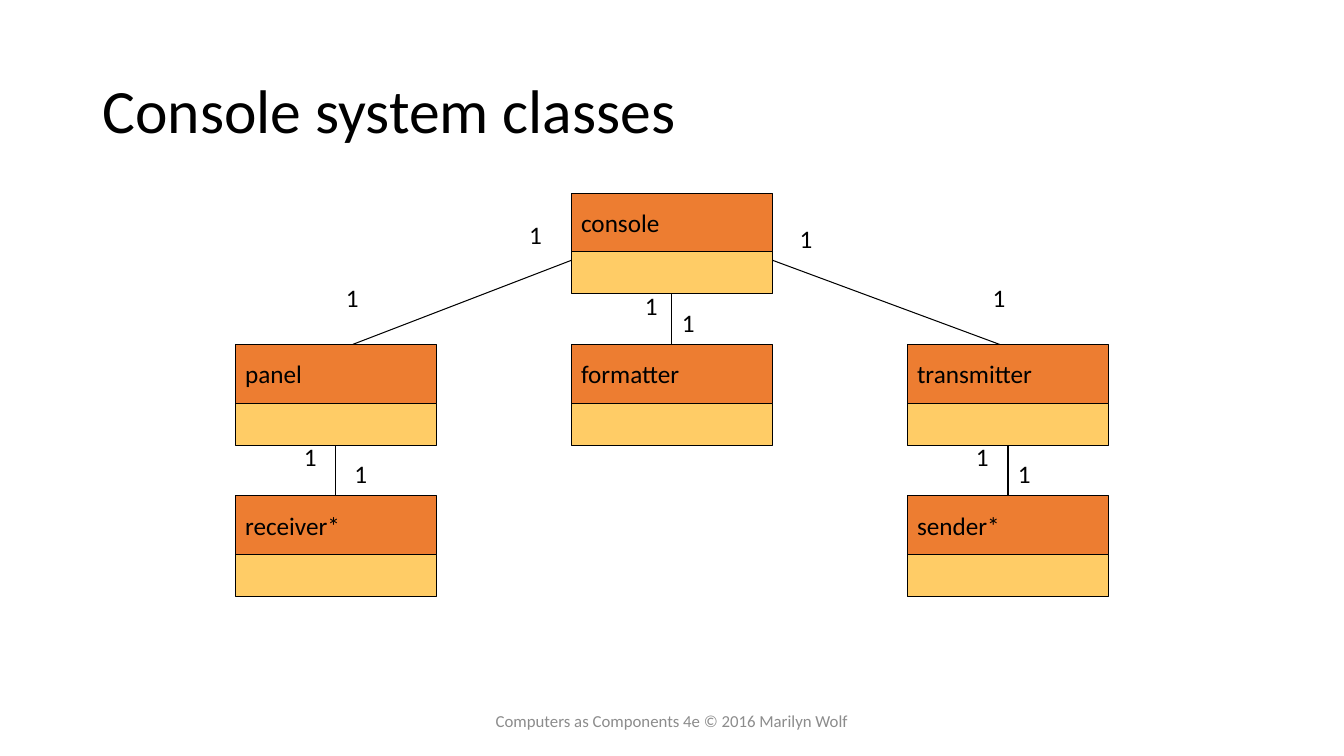
from pptx import Presentation
from pptx.dml.color import RGBColor
from pptx.enum.shapes import MSO_CONNECTOR, MSO_SHAPE
from pptx.enum.text import MSO_ANCHOR, MSO_AUTO_SIZE, PP_ALIGN
from pptx.oxml.ns import qn
from pptx.util import Inches, Pt
from lxml.etree import SubElement

COLUMNS, ROWS = 160, 90
BOX_WIDTH, HEAD_HEIGHT, BODY_HEIGHT = 24, 7, 5
BOX_HEIGHT = HEAD_HEIGHT + BODY_HEIGHT
LEFT, MIDDLE, RIGHT = 28, 68, 108
TOP, CENTRE, BOTTOM = 23, 41, 59


def colour(value):
    return RGBColor.from_string(value)


class ClassDiagram:
    font = "Calibri"
    ink = "000000"
    head_fill = "ED7D31"
    body_fill = "FFCC66"
    line_width = Pt(0.75)

    def __init__(self, deck):
        self.cell_width = deck.slide_width / COLUMNS
        self.cell_height = deck.slide_height / ROWS
        self.page = deck.slides.add_slide(deck.slide_layouts[5])

    def place(self, *cells):
        sizes = (self.cell_width, self.cell_height) * 2
        return [round(cell * size) for cell, size in zip(cells, sizes)]

    def set_text(self, box, text, size, ink=ink, align=PP_ALIGN.LEFT, anchor=MSO_ANCHOR.MIDDLE, wrap=True):
        frame = box.text_frame
        frame.word_wrap = wrap
        frame.vertical_anchor = anchor
        para = frame.paragraphs[0]
        para.text = text
        para.alignment = align
        para.font.name = self.font
        para.font.size = Pt(size)
        para.font.color.rgb = colour(ink)
        return para

    def stroke(self, line):
        line.color.rgb = colour(self.ink)
        line.width = self.line_width

    def title(self, text):
        box = self.page.shapes.title
        box.left, box.top, box.width, box.height = self.place(11, 4.8, 138, 17.4)
        self.set_text(box, text, 44).line_spacing = 0.9

    def rectangle(self, cells, fill):
        box = self.page.shapes.add_shape(MSO_SHAPE.RECTANGLE, *self.place(*cells))
        box.shadow.inherit = False
        box.fill.solid()
        box.fill.fore_color.rgb = colour(fill)
        self.stroke(box.line)
        return box

    def class_box(self, name, column, row):
        head = self.rectangle((column, row, BOX_WIDTH, HEAD_HEIGHT), self.head_fill)
        self.set_text(head, name, 18, wrap=False)
        self.rectangle((column, row + HEAD_HEIGHT, BOX_WIDTH, BODY_HEIGHT), self.body_fill)

    def association(self, start, end):
        link = self.page.shapes.add_connector(MSO_CONNECTOR.STRAIGHT, *self.place(*start, *end))
        self.stroke(link.line)
        SubElement(link._element.spPr, qn("a:effectLst"))

    def descent(self, column, row):
        axis = column + BOX_WIDTH / 2
        self.association((axis, row + BOX_HEIGHT), (axis, row + BOX_HEIGHT + 6))

    def multiplicity(self, column, row):
        box = self.page.shapes.add_textbox(*self.place(column, row, 4, 4.8))
        self.set_text(box, "1", 18, anchor=MSO_ANCHOR.TOP, wrap=False)
        box.text_frame.auto_size = MSO_AUTO_SIZE.SHAPE_TO_FIT_TEXT

    def footer(self, text):
        box = self.page.shapes.add_textbox(*self.place(53, 83.4, 54, 4.8))
        self.set_text(box, text, 12, "8C8C8C", PP_ALIGN.CENTER)


def main():
    deck = Presentation()
    deck.slide_width, deck.slide_height = Inches(COLUMNS / 12), Inches(ROWS / 12)
    diagram = ClassDiagram(deck)
    diagram.title("Console system classes")

    for name, column, row in (
        ("console", MIDDLE, TOP),
        ("panel", LEFT, CENTRE),
        ("formatter", MIDDLE, CENTRE),
        ("transmitter", RIGHT, CENTRE),
        ("receiver*", LEFT, BOTTOM),
        ("sender*", RIGHT, BOTTOM),
    ):
        diagram.class_box(name, column, row)

    diagram.association((MIDDLE, TOP + 8), (LEFT + 14, CENTRE))
    diagram.association((MIDDLE + BOX_WIDTH, TOP + 8), (RIGHT + 11, CENTRE))
    for column, row in ((MIDDLE, TOP), (LEFT, CENTRE), (RIGHT, CENTRE)):
        diagram.descent(column, row)

    for column, row in (
        (61.8, 25.5), (40, 33), (94, 26), (117, 33), (75.6, 34),
        (80, 36), (35, 52), (41, 54), (115, 52), (120, 54),
    ):
        diagram.multiplicity(column, row)

    diagram.footer("Computers as Components 4e © 2016 Marilyn Wolf")
    deck.save("out.pptx")


if __name__ == "__main__":
    main()
